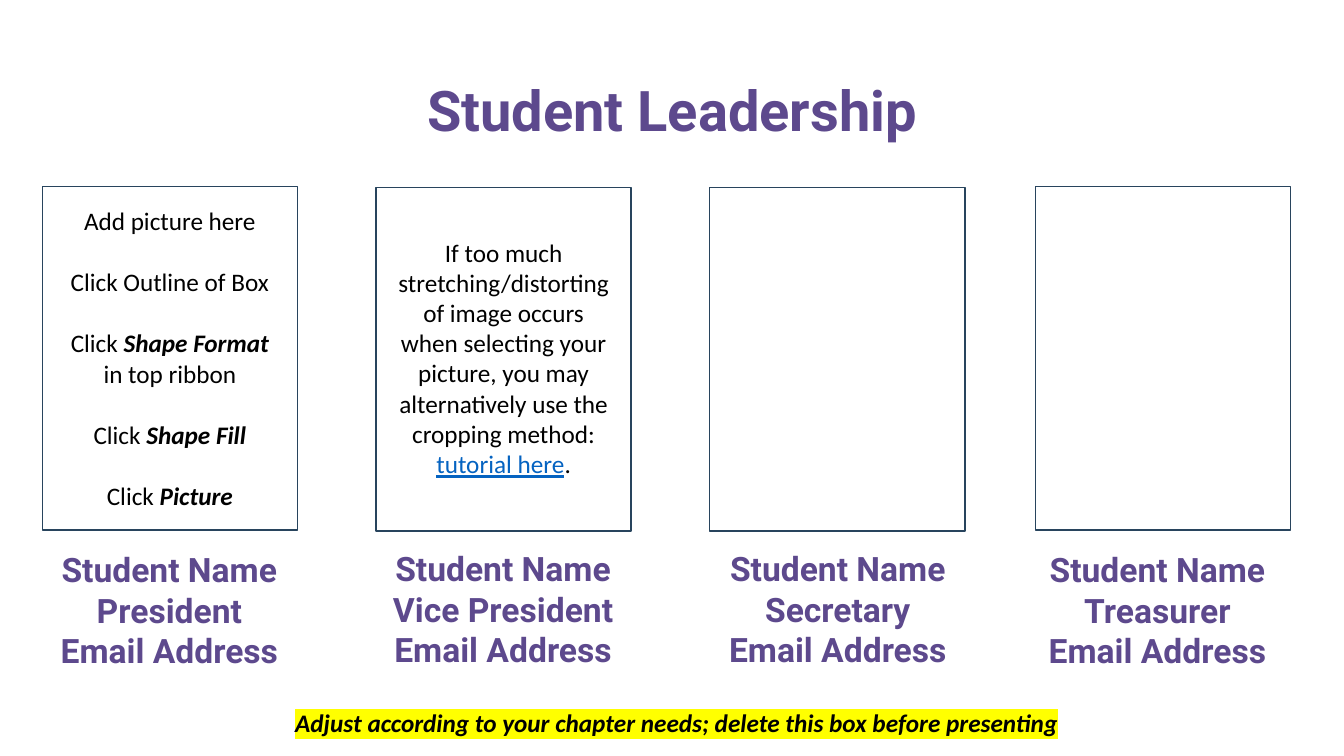
from lxml import etree
from pptx import Presentation
from pptx.dml.color import RGBColor
from pptx.enum import shapes, text
from pptx.oxml.ns import qn
from pptx.util import Inches, Pt

PURPLE, BLACK, LINK, NAVY, YELLOW = "5D498D", "000000", "0563C1", "28445D", "FFFF00"
FRAME_W, FRAME_H = 2.53, 3.41
OFFICERS = [
    ("President", 0.42, 1.85, 0.25, 5.4),
    ("Vice President", 3.73, 1.86, 3.56, 5.39),
    ("Secretary", 7.04, 1.86, 6.88, 5.39),
    ("Treasurer", 10.27, 1.85, 10.05, 5.4),
]
EMPHASIS = dict(bold=True, italic=True)
STEPS = [
    [("Add picture here", {})],
    [("Click Outline of Box", {})],
    [("Click ", {}), ("Shape Format ", EMPHASIS), ("in top ribbon", {})],
    [("Click ", {}), ("Shape Fill", EMPHASIS)],
    [("Click ", {}), ("Picture", EMPHASIS)],
]
CROPPING = [[
    ("If too much stretching/distorting of image occurs when selecting your picture, "
     "you may alternatively use the cropping method: ", {}),
    ("tutorial here", dict(color=LINK, underline=True)),
    (".", {}),
]]


def rgb(value):
    """Return the colour for a hex string."""
    return RGBColor.from_string(value)


def add_run(p, words, font="Calibri", size=18, color=BLACK, bold=False,
            italic=False, underline=False, highlight=None):
    """Add a formatted run to a paragraph."""
    r = p.add_run()
    r.text = words
    f = r.font
    f.name, f.size, f.bold, f.italic, f.underline = font, Pt(size), bold, italic, underline
    f.color.rgb = rgb(color)
    if highlight:
        mark = etree.Element(qn("a:highlight"))
        etree.SubElement(mark, qn("a:srgbClr"), val=highlight)
        r._r.rPr.find(qn("a:solidFill")).addnext(mark)


def fill_text(sp, paragraphs, align=text.PP_ALIGN.CENTER, gap=0, **style):
    """Write paragraphs of (words, format) runs into a shape."""
    tf = sp.text_frame
    tf.word_wrap = True
    tf.auto_size = text.MSO_AUTO_SIZE.NONE
    for i, runs in enumerate(paragraphs):
        p = tf.add_paragraph() if i else tf.paragraphs[0]
        p.alignment = align
        p.space_before = Pt(gap if i else 0)
        for words, extra in runs:
            add_run(p, words, **{**style, **extra})


def add_text(s, left, top, width, height, paragraphs, **style):
    """Add a text box."""
    sp = s.shapes.add_textbox(Inches(left), Inches(top), Inches(width), Inches(height))
    fill_text(sp, paragraphs, **style)


def add_title(s, words):
    """Place and format the slide title."""
    sp = s.shapes.title
    sp.left, sp.top, sp.width, sp.height = Inches(1.03), Inches(0.7), Inches(11.27), Inches(0.77)
    fill_text(sp, [[(words, {})]], font="Roboto", size=40, color=PURPLE, bold=True)


def add_frame(s, left, top):
    """Add an empty outlined photo frame."""
    sp = s.shapes.add_shape(shapes.MSO_SHAPE.RECTANGLE, Inches(left), Inches(top),
                            Inches(FRAME_W), Inches(FRAME_H))
    sp.shadow.inherit = False
    sp.fill.background()
    sp.line.color.rgb = rgb(NAVY)
    sp.line.width = Pt(1)


def main():
    """Build the student leadership slide."""
    prs = Presentation()
    prs.slide_width, prs.slide_height = Inches(13.33), Inches(7.5)
    s = prs.slides.add_slide(prs.slide_layouts[5])
    add_title(s, "Student Leadership")
    for role, left, top, caption_left, caption_top in OFFICERS:
        add_frame(s, left, top)
        caption = [[(line, {})] for line in ("Student Name", role, "Email Address")]
        add_text(s, caption_left, caption_top, 2.86, 1.31, caption,
                 font="Roboto", size=24, color=PURPLE, bold=True)
    add_text(s, 0.53, 1.99, 2.31, 3.13, STEPS, gap=22)
    add_text(s, 3.84, 2.3, 2.31, 2.52, CROPPING)
    note = "Adjust according to your chapter needs; delete this box before presenting"
    add_text(s, 2.83, 6.97, 7.87, 0.4, [[(note, {})]], align=text.PP_ALIGN.LEFT,
             highlight=YELLOW, **EMPHASIS)
    prs.save("out.pptx")


if __name__ == "__main__":
    main()
